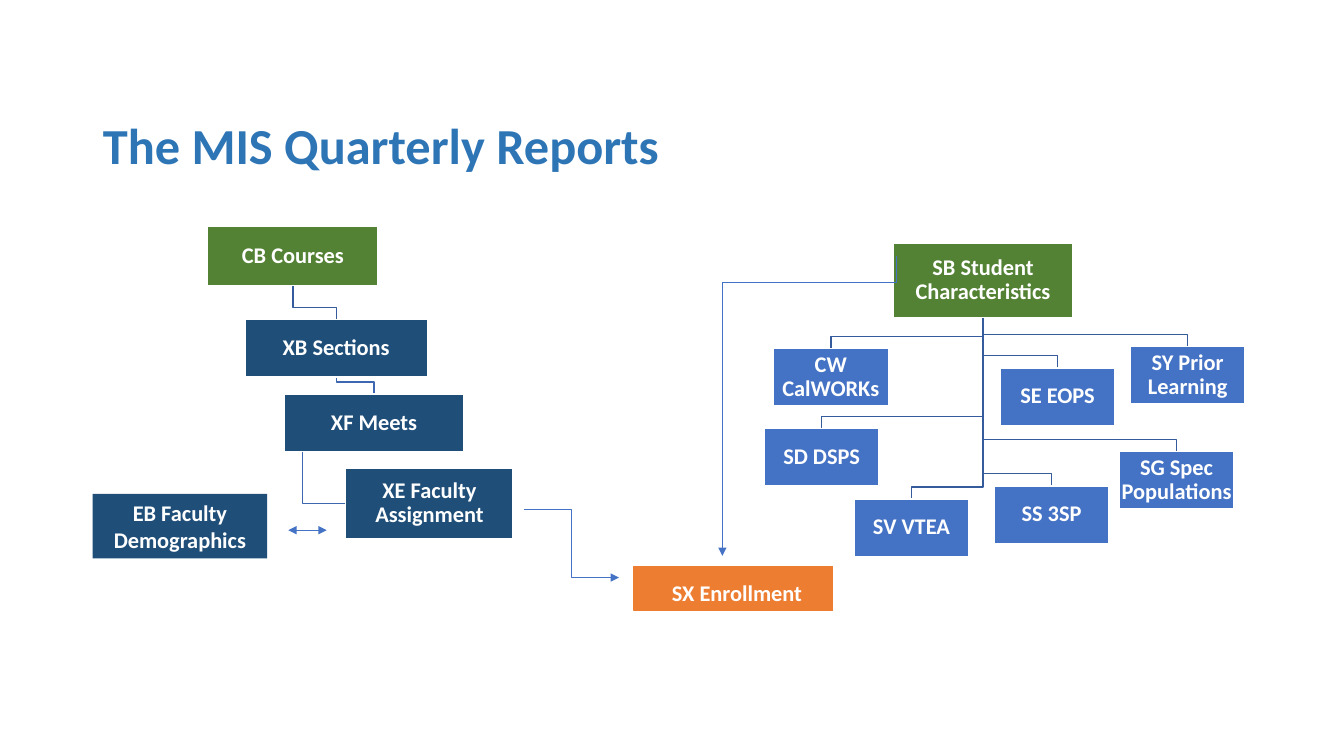
from lxml import etree
from pptx import Presentation
from pptx.dml.color import RGBColor
from pptx.enum.shapes import MSO_CONNECTOR, MSO_SHAPE
from pptx.enum.text import MSO_ANCHOR, PP_ALIGN
from pptx.oxml.ns import qn
from pptx.util import Inches, Pt

RECT = MSO_SHAPE.RECTANGLE
STRAIGHT, ELBOW = MSO_CONNECTOR.STRAIGHT, MSO_CONNECTOR.ELBOW
MIDDLE = MSO_ANCHOR.MIDDLE
LEFT, CENTER = PP_ALIGN.LEFT, PP_ALIGN.CENTER

WHITE = RGBColor(0xFF, 0xFF, 0xFF)
TITLE_BLUE = RGBColor(0x2E, 0x75, 0xB6)
GREEN = RGBColor(0x54, 0x82, 0x35)
NAVY = RGBColor(0x1F, 0x4E, 0x79)
BLUE = RGBColor(0x44, 0x72, 0xC4)
ORANGE = RGBColor(0xED, 0x7D, 0x31)
BRANCH = RGBColor(0x36, 0x5B, 0x9D)
SUB_BRANCH = RGBColor(0x3E, 0x67, 0xB2)

FONT = "Calibri"
TITLE = "The MIS Quarterly Reports"
LEAF = (1.14, 0.57)
ELBOW_GAP = 0.12

COURSE = ("CB Courses", 2.06, 2.25, 1.69, 0.58, GREEN)
SECTIONS = ("XB Sections", 2.43, 3.17, 1.81, 0.57, NAVY)
MEETS = ("XF Meets", 2.82, 3.91, 1.78, 0.57, NAVY)
ASSIGNMENT = ("XE Faculty Assignment", 3.43, 4.65, 1.66, 0.69, NAVY)
STUDENT = ("SB Student Characteristics", 8.86, 2.41, 1.78, 0.74, GREEN)
LEAVES = [
    (text, x, y, *LEAF, BLUE)
    for text, x, y in [
        ("CW CalWORKs", 7.67, 3.46),
        ("SE EOPS", 9.92, 3.65),
        ("SD DSPS", 7.58, 4.25),
        ("SG Spec Populations", 11.1, 4.48),
        ("SV VTEA", 8.47, 4.95),
        ("SS 3SP", 9.86, 4.82),
        ("SY Prior Learning", 11.21, 3.44),
    ]
]
ENROLLMENT = ("SX Enrollment", 6.29, 5.62, 1.97, 0.44, ORANGE)
DEMOGRAPHICS = ("EB Faculty Demographics", 0.92, 4.9, 1.73, 0.64, NAVY)


def format_text(tf, size, color, align):
    tf.word_wrap = True
    tf.vertical_anchor = MIDDLE
    p = tf.paragraphs[0]
    p.alignment = align
    font = p.runs[0].font
    font.name, font.size, font.bold = FONT, Pt(size), True
    font.color.rgb = color


def add_box(s, box, outline=WHITE, spacing=0.9, inset=0.01):
    text, x, y, w, h, fill = box
    sp = s.shapes.add_shape(RECT, Inches(x), Inches(y), Inches(w), Inches(h))
    sp.shadow.inherit = False
    sp.fill.solid()
    sp.fill.fore_color.rgb = fill
    if outline is None:
        sp.line.fill.background()
    else:
        sp.line.color.rgb = outline
        sp.line.width = Pt(1)
    tf = sp.text_frame
    tf.text = text
    tf.margin_left = tf.margin_right = Inches(inset)
    tf.margin_top = tf.margin_bottom = Inches(0.01)
    tf.paragraphs[0].line_spacing = spacing
    format_text(tf, 16, WHITE, CENTER)
    return sp


def add_path(s, points, color):
    start, *rest = [(Inches(x), Inches(y)) for x, y in points]
    builder = s.shapes.build_freeform(*start)
    builder.add_line_segments(rest, close=False)
    sp = builder.convert_to_shape()
    sp.shadow.inherit = False
    sp.fill.background()
    sp.line.color.rgb = color
    sp.line.width = Pt(1)


def add_branch(s, parent, child, color):
    _, px, py, pw, ph, _ = parent
    _, cx, cy, cw, _, _ = child
    start, end = px + pw / 2, cx + cw / 2
    turn = cy - ELBOW_GAP
    add_path(s, [(start, py + ph), (start, turn), (end, turn), (end, cy)], color)


def add_arrow(s, kind, start, end, ends=("tailEnd",)):
    cn = s.shapes.add_connector(kind, *[Inches(v) for v in (*start, *end)])
    cn.line.color.rgb = BLUE
    cn.line.width = Pt(0.5)
    ln = cn.line._ln
    for name in ends:
        etree.SubElement(ln, qn("a:" + name), type="triangle")
    etree.SubElement(cn._element.spPr, qn("a:effectLst"))
    return cn


def main():
    prs = Presentation()
    prs.slide_width, prs.slide_height = Inches(13.33), Inches(7.5)
    s = prs.slides.add_slide(prs.slide_layouts[5])

    title = s.shapes.title
    title.left, title.top = Inches(0.92), Inches(0.88)
    title.width, title.height = Inches(11.5), Inches(1.1)
    title.text_frame.text = TITLE
    format_text(title.text_frame, 36, TITLE_BLUE, LEFT)

    for leaf in LEAVES:
        add_branch(s, STUDENT, leaf, BRANCH)
    add_branch(s, COURSE, SECTIONS, BRANCH)
    add_branch(s, SECTIONS, MEETS, SUB_BRANCH)
    _, x, y, w, h, _ = MEETS
    _, ax, ay, _, ah, _ = ASSIGNMENT
    stem, middle = x + w / 10, ay + ah / 2
    add_path(s, [(stem, y + h), (stem, middle), (ax, middle)], SUB_BRANCH)

    for box in [COURSE, SECTIONS, MEETS, ASSIGNMENT, STUDENT, *LEAVES]:
        add_box(s, box)

    to_enrollment = add_arrow(s, ELBOW, (6.54, 3.16), (9.52, 4.89))
    to_enrollment._element.spPr.find(qn("a:xfrm")).set("rot", "5400000")
    guides = to_enrollment._element.spPr.find(qn("a:prstGeom")).get_or_add_avLst()
    etree.SubElement(guides, qn("a:gd"), name="adj1", fmla="val 9000")

    enrollment = add_box(s, ENROLLMENT, ORANGE, 1.0)
    enrollment.text_frame.margin_left = Inches(0.08)
    enrollment.text_frame.margin_top = Inches(0.08)
    add_arrow(s, ELBOW, (5.2, 5.05), (6.14, 5.73))
    add_box(s, DEMOGRAPHICS, None, 1.0, 0.1)
    add_arrow(s, STRAIGHT, (2.86, 5.26), (3.24, 5.26), ("headEnd", "tailEnd"))

    prs.save("out.pptx")


if __name__ == "__main__":
    main()
